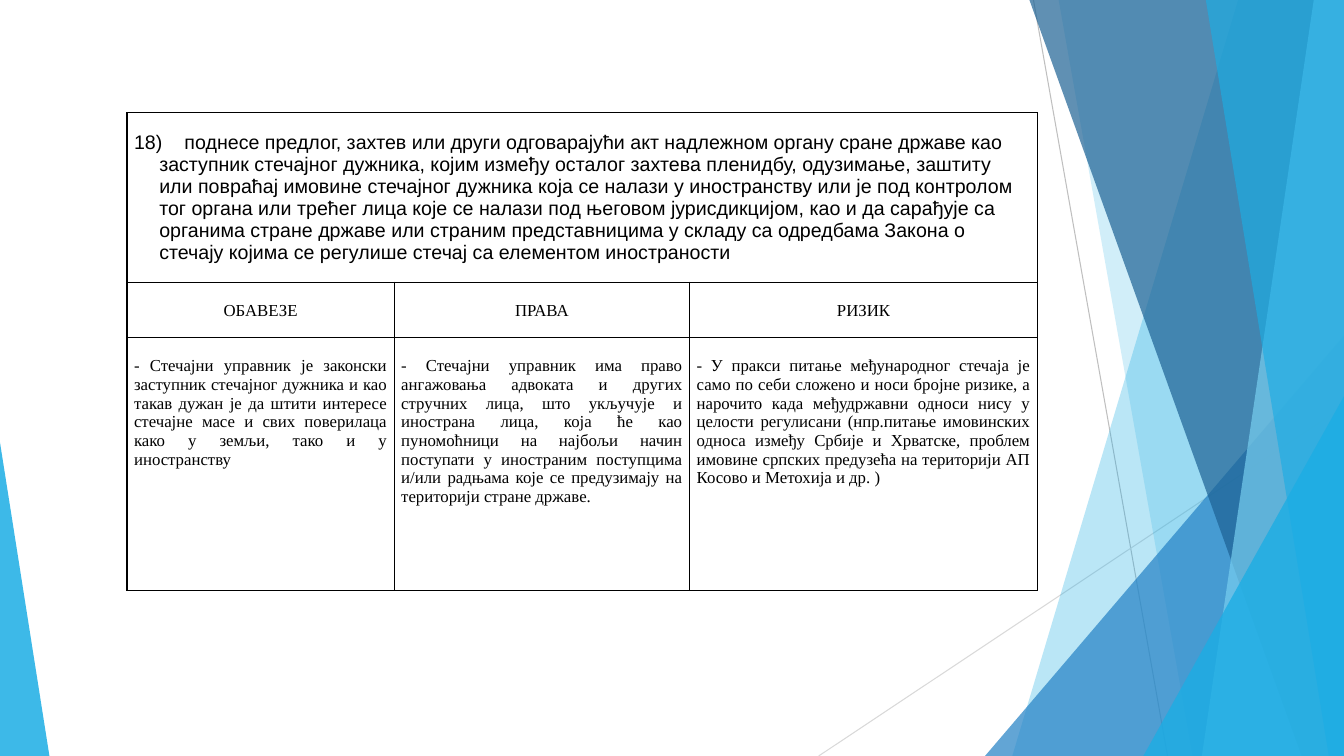
from lxml import etree
from pptx import Presentation
from pptx import util as u
from pptx.dml.color import RGBColor
from pptx.enum import shapes, text
from pptx.oxml import ns

WIDTH, HEIGHT = 13.33, 7.5

RAYS = [
    {"start": (10.25, 0), "end": (11.58, HEIGHT), "color": "BFBFBF"},
    {"start": (WIDTH, 4.03), "end": (8.12, HEIGHT), "color": "D9D9D9"},
]
FACETS = [
    {"kind": "band", "top_x": 12.28, "bottom_x": 10.04, "color": "1CADE4", "alpha": 30},
    {"kind": "band", "top_x": 10.5, "bottom_x": 11.83, "color": "1CADE4", "alpha": 20},
    {"kind": "triangle", "left": 9.77, "top": 3.33, "right": WIDTH, "apex": 1, "color": "2683C6", "alpha": 72},
    {"kind": "band", "top_x": 10.21, "bottom_x": 12.91, "color": "1D6294", "alpha": 70},
    {"kind": "band", "top_x": 13.03, "bottom_x": 11.92, "color": "77CEEF", "alpha": 70},
    {"kind": "band", "top_x": 11.96, "bottom_x": 13.18, "color": "1CADE4", "alpha": 65},
    {"kind": "triangle", "left": 11.34, "top": 3.93, "right": WIDTH, "apex": 1, "color": "1CADE4", "alpha": 80},
    {"kind": "triangle", "left": 0, "top": 4.39, "right": 0.49, "apex": 0, "color": "1CADE4", "alpha": 85},
]

TABLE_LEFT, TABLE_TOP = 1.26, 1.12
COLUMN_WIDTHS = [2.65, 2.93, 3.45]
ROW_HEIGHTS = [1.68, 0.55, 2.51]
MARGINS = {"margin_left": 0.07, "margin_right": 0.07, "margin_top": 0.19, "margin_bottom": 0}
DUTY = (
    "\tподнесе предлог, захтев или други одговарајући акт надлежном органу сране државе као "
    "заступник стечајног дужника, којим између осталог захтева пленидбу, одузимање, заштиту "
    "или повраћај имовине стечајног дужника која се налази у иностранству или је под контролом "
    "тог органа или трећег лица које се налази под његовом јурисдикцијом, као и да сарађује са "
    "органима стране државе или страним представницима у складу са одредбама Закона о "
    "стечају којима се регулише стечај са елементом иностраности"
)
HEADINGS = ["ОБАВЕЗЕ", "ПРАВА", "РИЗИК"]
DETAILS = [
    "- Стечајни управник је законски заступник стечајног дужника и као такав дужан је да штити "
    "интересе стечајне масе и свих поверилаца како у земљи, тако и у иностранству",
    "- Стечајни управник има право ангажовања адвоката и других стручних лица, што укључује и "
    "инострана лица, која ће као пуномоћници на најбољи начин поступати у иностраним поступцима "
    "и/или радњама које се предузимају на територији стране државе.",
    "- У пракси питање међународног стечаја је само по себи сложено и носи бројне ризике, а "
    "нарочито када међудржавни односи нису у целости регулисани (нпр.питање имовинских односа "
    "између Србије и Хрватске, проблем имовине српских предузећа на територији АП Косово и "
    "Метохија и др. )",
]
ROWS = [[DUTY, "", ""], HEADINGS, DETAILS]
ROW_FORMATS = [
    {"name": "Arial", "size": u.Pt(14), "bold": False},
    {"name": "Times New Roman", "size": u.Pt(12), "bold": False},
    {"name": "Times New Roman", "size": u.Pt(12), "bold": False},
]
ALIGNMENTS = [text.PP_ALIGN.LEFT, text.PP_ALIGN.CENTER, text.PP_ALIGN.JUSTIFY]


def rgb(color):
    return RGBColor.from_string(color)


def add_element(parent, tag, **attributes):
    element = etree.SubElement(parent, ns.qn(tag))
    for name, value in attributes.items():
        element.set(name, str(value))
    return element


def add_ray(slide, ray):
    points = [u.Inches(value) for value in ray["start"] + ray["end"]]
    connector = slide.shapes.add_connector(shapes.MSO_CONNECTOR.STRAIGHT, *points)
    connector.line.color.rgb = rgb(ray["color"])
    connector.line.width = u.Pt(0.75)
    add_element(connector._element.spPr, "a:effectLst")


def add_facet(slide, facet):
    if facet["kind"] == "band":
        corners = [(facet["top_x"], 0), (WIDTH, 0), (WIDTH, HEIGHT), (facet["bottom_x"], HEIGHT)]
        points = [(u.Inches(x), u.Inches(y)) for x, y in corners]
        builder = slide.shapes.build_freeform(*points[0])
        builder.add_line_segments(points[1:], close=True)
        shape = builder.convert_to_shape()
    else:
        left, top = facet["left"], facet["top"]
        box = [u.Inches(value) for value in (left, top, facet["right"] - left, HEIGHT - top)]
        shape = slide.shapes.add_shape(shapes.MSO_SHAPE.ISOSCELES_TRIANGLE, *box)
        shape.adjustments[0] = facet["apex"]
    shape.shadow.inherit = False
    shape.line.fill.background()
    shape.fill.solid()
    shape.fill.fore_color.rgb = rgb(facet["color"])
    color = shape._element.spPr.find(ns.qn("a:solidFill"))[0]
    add_element(color, "a:alpha", val=facet["alpha"] * 1000)


def add_borders(cell):
    properties = cell._tc.get_or_add_tcPr()
    for side in ("a:lnL", "a:lnR", "a:lnT", "a:lnB"):
        border = add_element(properties, side, w=u.Pt(1))
        add_element(add_element(border, "a:solidFill"), "a:srgbClr", val="000000")


def add_numbering(paragraph):
    properties = paragraph._p.get_or_add_pPr()
    properties.set("marL", str(u.Inches(0.25)))
    properties.set("indent", str(u.Inches(-0.25)))
    add_element(properties, "a:buFont", typeface="Arial")
    add_element(properties, "a:buAutoNum", type="arabicParenR", startAt=18)
    add_element(add_element(properties, "a:tabLst"), "a:tab", pos=u.Inches(0.5), algn="l")


def fill_cell(cell, words, font_format, alignment):
    for name, value in MARGINS.items():
        setattr(cell, name, u.Inches(value))
    add_borders(cell)
    cell.fill.background()
    paragraph = cell.text_frame.paragraphs[0]
    paragraph.alignment = alignment
    if words == DUTY:
        add_numbering(paragraph)
    if words:
        run = paragraph.add_run()
        run.text = words
        run.font.color.rgb = rgb("000000")
        for name, value in font_format.items():
            setattr(run.font, name, value)


def add_duty_table(slide):
    box = [u.Inches(value) for value in (TABLE_LEFT, TABLE_TOP, sum(COLUMN_WIDTHS), sum(ROW_HEIGHTS))]
    table = slide.shapes.add_table(len(ROWS), len(COLUMN_WIDTHS), *box).table
    table.first_row = table.horz_banding = False
    for column, width in zip(table.columns, COLUMN_WIDTHS):
        column.width = u.Inches(width)
    for row, height, words, font_format, alignment in zip(
        table.rows, ROW_HEIGHTS, ROWS, ROW_FORMATS, ALIGNMENTS
    ):
        row.height = u.Inches(height)
        for cell, cell_words in zip(row.cells, words):
            fill_cell(cell, cell_words, font_format, alignment)
    table.cell(0, 0).merge(table.cell(0, len(COLUMN_WIDTHS) - 1))


def main():
    presentation = Presentation()
    presentation.slide_width = u.Inches(WIDTH)
    presentation.slide_height = u.Inches(HEIGHT)
    slide = presentation.slides.add_slide(presentation.slide_layouts[6])
    for ray in RAYS:
        add_ray(slide, ray)
    for facet in FACETS:
        add_facet(slide, facet)
    add_duty_table(slide)
    presentation.save("out.pptx")


if __name__ == "__main__":
    main()
